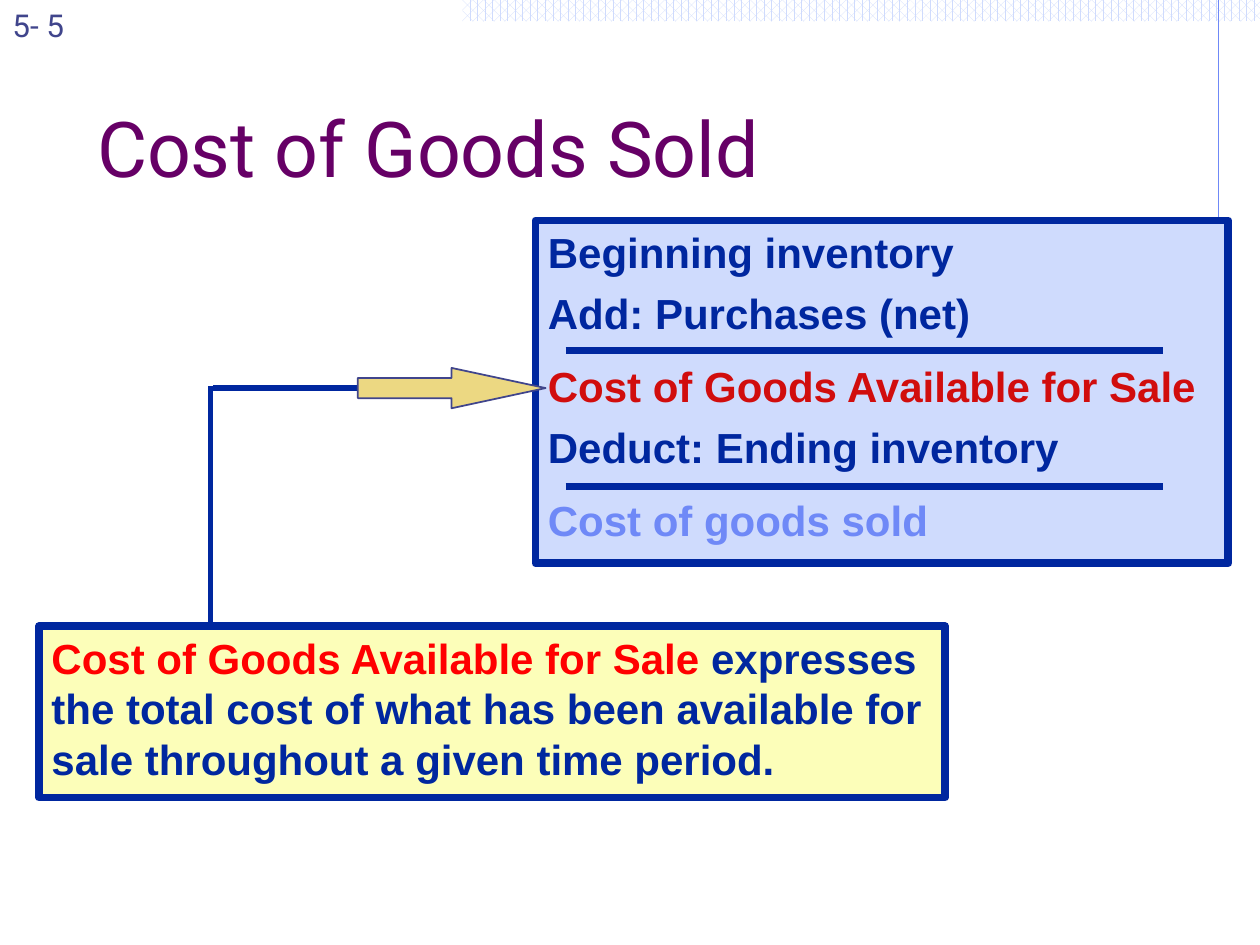
from dataclasses import dataclass

from lxml import etree
from pptx import Presentation
from pptx.dml.color import RGBColor
from pptx.enum import dml, shapes, text
from pptx.oxml import ns
from pptx.util import Inches, Pt

COLOURS = {
    "white": "FFFFFF", "pale": "CFDBFD", "navy": "00279F", "sky": "6F89F7",
    "indigo": "40458C", "plum": "660066", "crimson": "D10D0D",
    "red": "FF0000", "cream": "FCFEB9", "gold": "ECD882",
}


@dataclass
class Span:
    words: str
    colour: str = "navy"


@dataclass
class Entry:
    spans: list[Span]
    space_before: float = 0


@dataclass
class Panel:
    area: tuple[float, float, float, float]
    fill: str
    entries: list[Entry]


@dataclass
class Line:
    start: tuple[float, float]
    end: tuple[float, float]
    width: float
    colour: str = "navy"


def colour_of(name: str) -> RGBColor:
    return RGBColor.from_string(COLOURS[name])


def style_font(font, face: str, size: float, colour: str, bold: bool = False) -> None:
    font.name, font.size, font.bold = face, Pt(size), bold
    font.color.rgb = colour_of(colour)


def add_block(page, kind, area, fill: str, line: str, width: float):
    block = page.shapes.add_shape(kind, *map(Inches, area))
    block.shadow.inherit = False
    block.fill.solid()
    block.fill.fore_color.rgb = colour_of(fill)
    block.line.color.rgb = colour_of(line)
    block.line.width = Pt(width)
    return block


def add_panel(page, panel: Panel) -> None:
    box = add_block(page, shapes.MSO_SHAPE.RECTANGLE, panel.area, panel.fill, "navy", 4.5)
    frame = box.text_frame
    frame.word_wrap = True
    frame.vertical_anchor = text.MSO_ANCHOR.TOP
    for index, entry in enumerate(panel.entries):
        para = frame.add_paragraph() if index else frame.paragraphs[0]
        para.alignment = text.PP_ALIGN.LEFT
        para.space_before = Pt(entry.space_before)
        for span in entry.spans:
            run = para.add_run()
            run.text = span.words
            style_font(run.font, "Arial", 24, span.colour, bold=True)


def add_line(page, line: Line) -> None:
    connector = page.shapes.add_connector(
        shapes.MSO_CONNECTOR.STRAIGHT, *map(Inches, line.start + line.end))
    connector.line.color.rgb = colour_of(line.colour)
    connector.line.width = Pt(line.width)
    etree.SubElement(connector._element.spPr, ns.qn("a:effectLst"))


def main() -> None:
    deck = Presentation()
    deck.slide_width, deck.slide_height = Inches(10), Inches(7.5)
    page = deck.slides.add_slide(deck.slide_layouts[5])

    # Patterned band and margin line
    band = page.shapes.add_shape(
        shapes.MSO_SHAPE.RECTANGLE, *map(Inches, (3.67, 0, 6.33, 0.17)))
    band.shadow.inherit = False
    band.line.fill.background()
    band.fill.patterned()
    band.fill.pattern = dml.MSO_PATTERN.PERCENT_60
    band.fill.fore_color.rgb = colour_of("pale")
    band.fill.back_color.rgb = colour_of("white")
    add_line(page, Line((9.67, 0), (9.67, 2.58), 0.75, "sky"))

    # Page number
    number = page.shapes.add_textbox(*map(Inches, (0, 0, 0.83, 0.5)))
    number.text_frame.word_wrap = True
    number.text_frame.text = "5- 5"
    style_font(number.text_frame.paragraphs[0].runs[0].font, "Roboto", 18, "indigo")

    # Title
    title = page.shapes.title
    title.left, title.top, title.width, title.height = map(Inches, (0.67, 0.33, 8.5, 1.25))
    title.text_frame.text = "Cost of Goods Sold"
    title.text_frame.vertical_anchor = text.MSO_ANCHOR.BOTTOM
    heading = title.text_frame.paragraphs[0]
    heading.alignment = text.PP_ALIGN.LEFT
    style_font(heading.runs[0].font, "Roboto", 44, "plum")

    # Calculation with its sum rules
    add_panel(page, Panel((4.25, 1.75, 5.5, 2.72), "pale", [
        Entry([Span("Beginning inventory")]),
        Entry([Span("Add: Purchases (net)")], 6),
        Entry([Span("Cost of Goods Available for Sale", "crimson")], 13),
        Entry([Span("Deduct: Ending inventory")], 6),
        Entry([Span("Cost of goods sold", "sky")], 13),
    ]))
    for y in (2.78, 3.86):
        add_line(page, Line((4.49, y), (9.23, y), 4))

    # Definition
    add_panel(page, Panel((0.31, 4.97, 7.19, 1.36), "cream", [
        Entry([
            Span("Cost of Goods Available for Sale", "red"),
            Span(" expresses the total cost of what has been available for "
                 "sale throughout a given time period."),
        ]),
    ]))

    # Link from the definition to the calculation
    add_line(page, Line((1.67, 4.94), (1.67, 3.06), 3))
    add_line(page, Line((1.69, 3.08), (4.23, 3.08), 3))
    arrow = add_block(page, shapes.MSO_SHAPE.RIGHT_ARROW,
                      (2.84, 2.92, 1.49, 0.32), "gold", "indigo", 1)
    arrow.adjustments[0] = 0.5
    arrow.adjustments[1] = 2.33

    deck.save("out.pptx")


if __name__ == "__main__":
    main()
